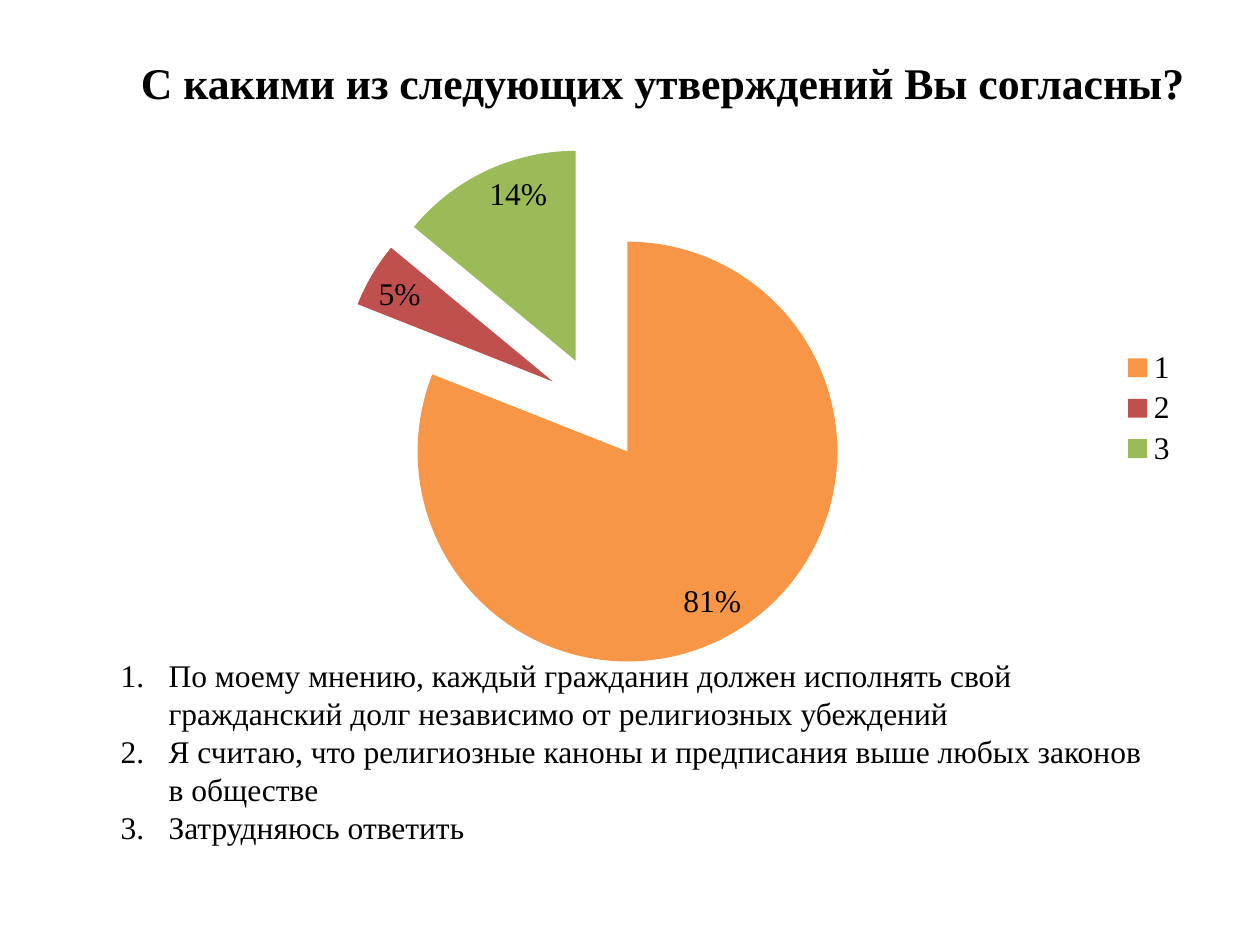
from dataclasses import dataclass

from lxml.etree import SubElement
from pptx import Presentation
from pptx.chart.data import CategoryChartData as ChartData
from pptx.dml.color import RGBColor as Rgb
from pptx.enum.chart import XL_CHART_TYPE as Kind
from pptx.enum.chart import XL_LABEL_POSITION as Spot
from pptx.enum.chart import XL_LEGEND_POSITION as Side
from pptx.enum.text import MSO_AUTO_SIZE as Fit
from pptx.oxml.ns import qn
from pptx.slide import Slide
from pptx.util import Inches, Pt


@dataclass(frozen=True)
class Theme:
    face: str = "Times New Roman"
    ink: Rgb = Rgb(0, 0, 0)
    head: Pt = Pt(25)
    body: Pt = Pt(18)
    indent: Inches = Inches(0.38)
    explode: int = 25


@dataclass(frozen=True)
class Box:
    left: float
    top: float
    width: float
    height: float

    def place(self) -> tuple:
        return tuple(map(Inches, (self.left, self.top, self.width, self.height)))


@dataclass(frozen=True)
class Slice:
    share: int
    fill: str
    text: str


THEME = Theme()
TITLE = "С какими из следующих утверждений Вы согласны?"
SLICES = [
    Slice(81, "F79646", "По моему мнению, каждый гражданин должен исполнять свой "
                        "гражданский долг независимо от религиозных убеждений"),
    Slice(5, "C0504D", "Я считаю, что религиозные каноны и предписания выше "
                       "любых законов в обществе"),
    Slice(14, "9BBB59", "Затрудняюсь ответить"),
]


def style(font, size: Pt, bold: bool = False) -> None:
    font.name, font.size, font.bold = THEME.face, size, bold
    font.color.rgb = THEME.ink


def add_text(slide: Slide, box: Box, lines: list[str], size: Pt,
             bold: bool = False, numbered: bool = False) -> None:
    frame = slide.shapes.add_textbox(*box.place()).text_frame
    frame.word_wrap = True
    frame.auto_size = Fit.SHAPE_TO_FIT_TEXT
    for i, line in enumerate(lines):
        para = frame.add_paragraph() if i else frame.paragraphs[0]
        run = para.add_run()
        run.text = line
        style(run.font, size, bold)
        if numbered:
            props = para._p.get_or_add_pPr()
            props.set("marL", str(THEME.indent))
            props.set("indent", str(-THEME.indent))
            SubElement(props, qn("a:buAutoNum"), type="arabicPeriod")


def add_pie(slide: Slide, box: Box, slices: list[Slice]) -> None:
    data = ChartData()
    data.categories = [str(i + 1) for i in range(len(slices))]
    data.add_series("Ответы", [s.share for s in slices])
    chart = slide.shapes.add_chart(Kind.PIE, *box.place(), data).chart
    chart.has_title = False
    style(chart.font, THEME.body)

    # Legend
    chart.has_legend = True
    chart.legend.position = Side.RIGHT
    chart.legend.include_in_layout = False

    # Slice colours, pulled apart from the centre
    plot = chart.plots[0]
    plot.vary_by_categories = True
    series = plot.series[0]
    for i, part in enumerate(slices):
        fill = series.points[i].format.fill
        fill.solid()
        fill.fore_color.rgb = Rgb.from_string(part.fill)
    node = series._element
    gap = SubElement(node, qn("c:explosion"), val=str(THEME.explode))
    node.find(qn("c:dPt")).addprevious(gap)

    # Percent labels
    labels = series.data_labels
    labels.show_percentage = True
    labels.show_value = False
    labels.position = Spot.INSIDE_END
    style(labels.font, THEME.body)


def main() -> None:
    deck = Presentation()
    deck.slide_width, deck.slide_height = Inches(10), Inches(7.5)
    slide = deck.slides.add_slide(deck.slide_layouts[6])

    # Question, chart, then the numbered answers
    add_text(slide, Box(1.02, 0.39, 8.75, 0.52), [TITLE], THEME.head, bold=True)
    add_pie(slide, Box(0.62, 1.02, 8.83, 4.44), SLICES)
    add_text(slide, Box(0.86, 5.16, 8.44, 1.62), [s.text for s in SLICES],
             THEME.body, numbered=True)
    deck.save("out.pptx")


if __name__ == "__main__":
    main()
